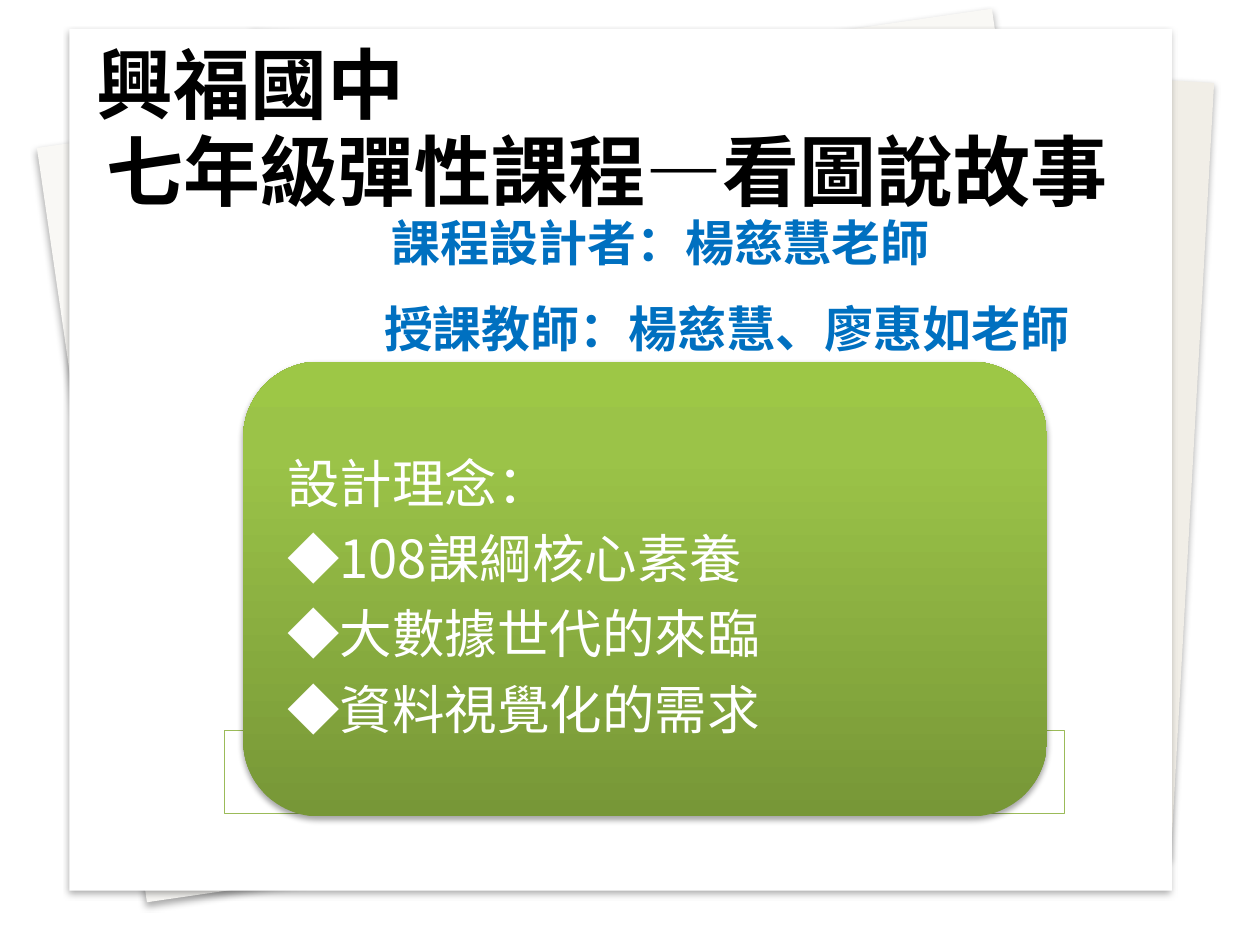
from dataclasses import dataclass
from typing import Optional

from lxml.etree import SubElement
from pptx import Presentation
from pptx.dml.color import RGBColor as Color
from pptx.enum.shapes import MSO_SHAPE as ShapeKind
from pptx.enum.text import MSO_ANCHOR as Anchor
from pptx.oxml.ns import qn
from pptx.util import Inches, Pt


@dataclass(frozen=True)
class Theme:
    font: str = "Noto Sans CJK JP"
    black: str = "000000"
    white: str = "FFFFFF"
    blue: str = "0070C0"
    outline: str = "9BBB59"
    back_paper: str = "F1EEE7"
    side_paper: str = "F9F8F5"
    gradient: tuple = ((0, "779737"), (80, "9BC348"), (100, "9DC746"))
    title_size: int = 44
    teacher_size: int = 28
    concept_size: int = 30


@dataclass(frozen=True)
class Box:
    left: float
    top: float
    width: float
    height: float

    def lengths(self) -> tuple:
        return tuple(Inches(v) for v in (self.left, self.top, self.width, self.height))


@dataclass(frozen=True)
class Shadow:
    opacity: int
    blur: float
    distance: float


@dataclass(frozen=True)
class Panel:
    box: Box
    fill: Optional[str] = None
    rotation: float = 0
    kind: ShapeKind = ShapeKind.RECTANGLE
    shadow: Optional[Shadow] = None
    line: Optional[str] = None
    opacity: int = 100


@dataclass(frozen=True)
class Line:
    text: str
    size: int
    color: str
    spacing: float
    bold: bool = False
    indent: float = 0


THEME = Theme()
PAPER_SHADOW = Shadow(32, 3.5, 2.2)
CARD_SHADOW = Shadow(35, 3.1, 1.8)

PANELS = (
    Panel(Box(1.81, 0.44, 7.66, 6.17), THEME.back_paper, 3.2, shadow=PAPER_SHADOW),
    Panel(Box(0.69, 0.59, 7.66, 6.05), THEME.side_paper, 351.7, shadow=PAPER_SHADOW),
    Panel(Box(0.55, 0.23, 8.75, 6.84), THEME.white, shadow=PAPER_SHADOW),
    Panel(Box(1.78, 5.8, 6.67, 0.66), THEME.white, line=THEME.outline, opacity=90),
    Panel(Box(1.93, 2.87, 6.38, 3.61), kind=ShapeKind.ROUNDED_RECTANGLE, shadow=CARD_SHADOW),
)

CONCEPTS = ("設計理念：", "◆108課綱核心素養", "◆大數據世代的來臨", "◆資料視覺化的需求")


def title_line(text: str) -> Line:
    return Line(text, THEME.title_size, THEME.black, 58, True)


def teacher_line(text: str, spacing: float, indent: float) -> Line:
    return Line(text, THEME.teacher_size, THEME.blue, spacing, True, indent)


def add_alpha(color_element, percent: int) -> None:
    SubElement(color_element, qn("a:alpha")).set("val", str(percent * 1000))


def add_shadow(shape, shadow: Shadow) -> None:
    effects = shape._element.spPr.find(qn("a:effectLst"))
    outer = SubElement(effects, qn("a:outerShdw"))
    outer.set("blurRad", str(Pt(shadow.blur)))
    outer.set("dist", str(Pt(shadow.distance)))
    outer.set("dir", "5400000")
    outer.set("algn", "t")
    outer.set("rotWithShape", "0")
    color = SubElement(outer, qn("a:srgbClr"))
    color.set("val", THEME.black)
    add_alpha(color, shadow.opacity)


def fill_gradient(shape) -> None:
    shape.fill.gradient()
    shape.fill.gradient_angle = 90
    stops = shape._element.spPr.find(qn("a:gradFill")).find(qn("a:gsLst"))
    for stop in list(stops):
        stops.remove(stop)
    for position, color in THEME.gradient:
        stop = SubElement(stops, qn("a:gs"))
        stop.set("pos", str(position * 1000))
        SubElement(stop, qn("a:srgbClr")).set("val", color)


def add_panel(slide, panel: Panel) -> None:
    shape = slide.shapes.add_shape(panel.kind, *panel.box.lengths())
    shape.rotation = panel.rotation
    shape.shadow.inherit = False
    if panel.fill:
        shape.fill.solid()
        shape.fill.fore_color.rgb = Color.from_string(panel.fill)
    else:
        fill_gradient(shape)
    if panel.opacity < 100:
        add_alpha(shape._element.spPr.find(qn("a:solidFill"))[0], panel.opacity)
    if panel.line:
        shape.line.color.rgb = Color.from_string(panel.line)
        shape.line.width = Pt(0.75)
    else:
        shape.line.fill.background()
    if panel.shadow:
        add_shadow(shape, panel.shadow)


def add_text(slide, box: Box, lines: list[Line], anchor: Anchor = Anchor.TOP,
             side: float = 0.1, edge: float = 0.05) -> None:
    frame = slide.shapes.add_textbox(*box.lengths()).text_frame
    frame.word_wrap = True
    frame.vertical_anchor = anchor
    frame.margin_left = frame.margin_right = Inches(side)
    frame.margin_top = frame.margin_bottom = Inches(edge)
    frame.text = "\n".join(line.text for line in lines)
    for paragraph, line in zip(frame.paragraphs, lines):
        paragraph.line_spacing = Pt(line.spacing)
        if line.indent:
            properties = paragraph._p.get_or_add_pPr()
            properties.set("marL", str(Inches(line.indent)))
            properties.set("indent", "0")
        for run in paragraph.runs:
            run.font.size = Pt(line.size)
            run.font.bold = line.bold
            run.font.color.rgb = Color.from_string(line.color)
            run.font.name = THEME.font
            SubElement(run.font._element, qn("a:ea")).set("typeface", THEME.font)


def main() -> None:
    presentation = Presentation()
    presentation.slide_width = Inches(10)
    presentation.slide_height = Inches(7.5)
    slide = presentation.slides.add_slide(presentation.slide_layouts[6])
    for panel in PANELS:
        add_panel(slide, panel)
    concepts = [Line(text, THEME.concept_size, THEME.white, 43) for text in CONCEPTS]
    add_text(slide, Box(2.1, 3.05, 6.03, 3.25), concepts, Anchor.MIDDLE, 0.18, 0)
    add_text(slide, Box(0.75, 0.86, 8.74, 2.79), [
        title_line("七年級彈性課程—看圖說故事"),
        teacher_line("課程設計者：楊慈慧老師", 31.5, 2.26),
        teacher_line("授課教師：楊慈慧、廖惠如老師", 49, 2.2),
    ])
    add_text(slide, Box(0.67, 0.17, 8.74, 0.84), [title_line("興福國中")])
    presentation.save("out.pptx")


if __name__ == "__main__":
    main()
